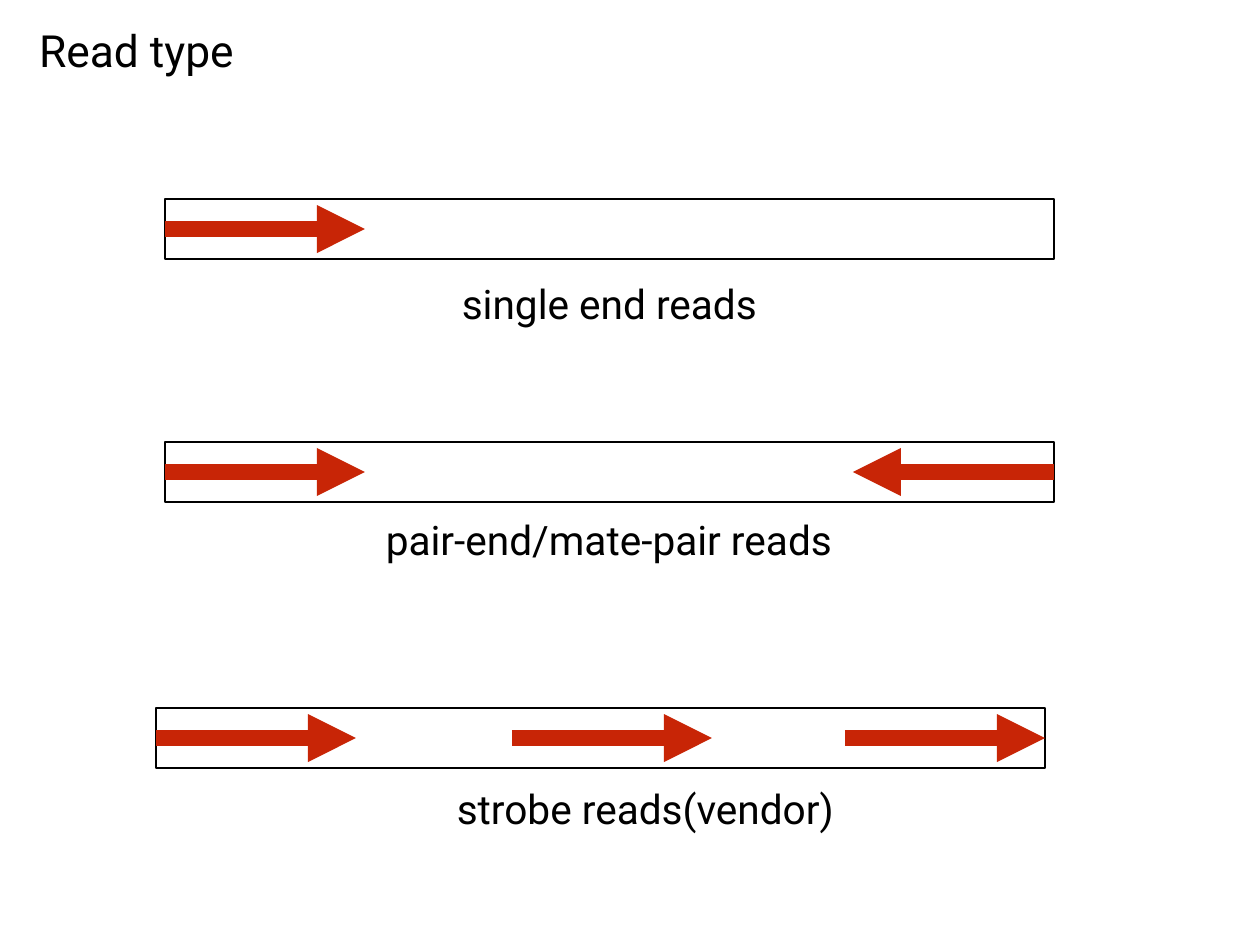
from dataclasses import dataclass

from lxml.etree import SubElement
from pptx import Presentation
from pptx.dml.color import RGBColor
from pptx.enum.shapes import MSO_CONNECTOR, MSO_SHAPE
from pptx.enum.text import MSO_ANCHOR, MSO_AUTO_SIZE, PP_ALIGN
from pptx.oxml.ns import qn
from pptx.util import Emu, Pt

SLIDE_SIZE = (1260, 945)
FRAGMENT_SIZE = (889, 60)
TEXT_INSET = 5
TITLE = ("Read type", (29, 18, 215, 63))

# label, label box, fragment left and top, reads as (start, end) along the fragment
READ_TYPES = [
    ("single end reads", (452, 274, 315, 59), (165, 199), [(0, 200)]),
    ("strobe reads(vendor)", (448, 779, 395, 59), (156, 708),
     [(0, 200), (356, 556), (689, 889)]),
    ("pair-end/mate-pair reads", (378, 510, 462, 59), (165, 442),
     [(0, 200), (889, 688)]),
]


@dataclass(frozen=True)
class Theme:
    font: str = "Roboto"
    ink: RGBColor = RGBColor(0x00, 0x00, 0x00)
    read: RGBColor = RGBColor(0xC8, 0x25, 0x06)
    title_size: Pt = Pt(36)
    label_size: Pt = Pt(33)
    fragment_line: Pt = Pt(2)
    read_line: Pt = Pt(13)


THEME = Theme()


def px(length):
    return Emu(round(length * 914400 / 88.6))


def add_text(shapes, text, box, size):
    text_frame = shapes.add_textbox(*map(px, box)).text_frame
    text_frame.text = text
    text_frame.word_wrap = False
    text_frame.auto_size = MSO_AUTO_SIZE.SHAPE_TO_FIT_TEXT
    text_frame.vertical_anchor = MSO_ANCHOR.MIDDLE
    text_frame.margin_left = text_frame.margin_right = px(TEXT_INSET)
    text_frame.margin_top = text_frame.margin_bottom = px(TEXT_INSET)
    paragraph = text_frame.paragraphs[0]
    paragraph.alignment = PP_ALIGN.CENTER
    font = paragraph.runs[0].font
    font.name, font.size = THEME.font, size
    font.color.rgb = THEME.ink


def add_fragment(shapes, left, top):
    fragment = shapes.add_shape(
        MSO_SHAPE.RECTANGLE, *map(px, (left, top, *FRAGMENT_SIZE)))
    fragment.shadow.inherit = False
    fragment.fill.background()
    fragment.line.color.rgb = THEME.ink
    fragment.line.width = THEME.fragment_line
    return fragment


def add_read(shapes, fragment, left, middle, start, end):
    """Draw one arrow, joined to the fragment where it meets a side."""
    arrow = shapes.add_connector(
        MSO_CONNECTOR.STRAIGHT,
        px(left + start), px(middle), px(left + end), px(middle))
    arrow.line.color.rgb = THEME.read
    arrow.line.width = THEME.read_line
    properties = arrow._element.spPr
    SubElement(properties.find(qn("a:ln")), qn("a:tailEnd"), type="triangle")
    SubElement(properties, qn("a:effectLst"))
    side_sites = {0: 1, FRAGMENT_SIZE[0]: 3}
    if start in side_sites:
        arrow.begin_connect(fragment, side_sites[start])
    if end in side_sites:
        arrow.end_connect(fragment, side_sites[end])


def main():
    presentation = Presentation()
    presentation.slide_width, presentation.slide_height = map(px, SLIDE_SIZE)
    slide = presentation.slides.add_slide(presentation.slide_layouts[6])
    add_text(slide.shapes, *TITLE, THEME.title_size)
    for label, label_box, (left, top), reads in READ_TYPES:
        shapes = slide.shapes.add_group_shape().shapes
        add_text(shapes, label, label_box, THEME.label_size)
        fragment = add_fragment(shapes, left, top)
        middle = top + FRAGMENT_SIZE[1] / 2
        for start, end in reads:
            add_read(shapes, fragment, left, middle, start, end)
    presentation.save("out.pptx")


if __name__ == "__main__":
    main()
